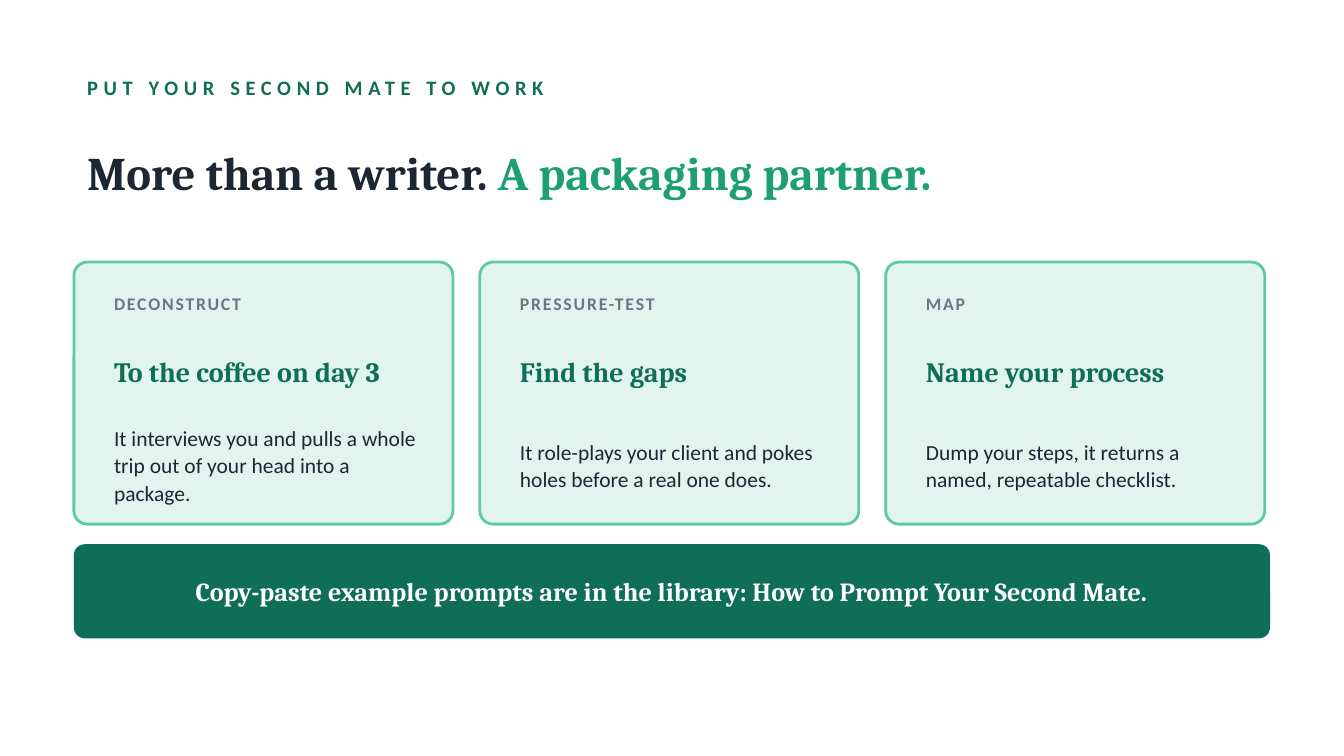
from pptx import Presentation
from pptx.dml.color import RGBColor
from pptx.enum.shapes import MSO_SHAPE as Shape
from pptx.enum.text import MSO_ANCHOR as Anchor, PP_ALIGN as Align
from pptx.util import Inches, Pt

INK = RGBColor(0x1C, 0x27, 0x33)
GRAY = RGBColor(0x6B, 0x77, 0x85)
DEEP_GREEN = RGBColor(0x0F, 0x6E, 0x56)
GREEN = RGBColor(0x1D, 0x9E, 0x75)
BORDER = RGBColor(0x5D, 0xCA, 0xA5)
MINT = RGBColor(0xE1, 0xF5, 0xEE)
WHITE = RGBColor(0xFF, 0xFF, 0xFF)
SANS, SERIF = "Calibri", "Cambria"

# Widescreen 16:9
deck = Presentation()
deck.slide_width, deck.slide_height = Inches(10), Inches(10 * 9 / 16)
slide = deck.slides.add_slide(deck.slide_layouts[6])


def add_text(words, left, top, width, height, size, font, color, bold=True, spacing=0):
    """Add a one-paragraph text box and return the paragraph."""
    box = slide.shapes.add_textbox(Inches(left), Inches(top), Inches(width), Inches(height))
    frame = box.text_frame
    frame.word_wrap = True
    frame.vertical_anchor = Anchor.MIDDLE
    line = frame.paragraphs[0]
    run = line.add_run()
    run.text = words
    if spacing:
        run.font._element.set("spc", str(spacing * 100))
    line.font.size, line.font.name, line.font.bold = Pt(size), font, bold
    run.font.color.rgb = color
    return line


def add_panel(left, top, width, height, radius, fill):
    """Add a rounded panel without an outline."""
    panel = slide.shapes.add_shape(
        Shape.ROUNDED_RECTANGLE, Inches(left), Inches(top), Inches(width), Inches(height))
    panel.adjustments[0] = radius / min(width, height)
    panel.shadow.inherit = False
    panel.fill.solid()
    panel.fill.fore_color.rgb = fill
    panel.line.fill.background()
    return panel


# Heading
MARGIN, CONTENT_WIDTH = 0.55, 8.9
add_text("PUT YOUR SECOND MATE TO WORK", MARGIN, 0.5, CONTENT_WIDTH, 0.3,
         11, SANS, DEEP_GREEN, spacing=3)
title = add_text("More than a writer. ", MARGIN, 0.85, CONTENT_WIDTH, 0.85, 25, SERIF, INK)
accent = title.add_run()
accent.text = "A packaging partner."
accent.font.color.rgb = GREEN

# Three cards
CARD_TOP, CARD_WIDTH, CARD_HEIGHT, GAP = 1.95, 2.82, 1.95, 0.2
TEXT_WIDTH = 2.45
cards = [
    ("DECONSTRUCT", "To the coffee on day 3",
     "It interviews you and pulls a whole trip out of your head into a package."),
    ("PRESSURE-TEST", "Find the gaps",
     "It role-plays your client and pokes holes before a real one does."),
    ("MAP", "Name your process",
     "Dump your steps, it returns a named, repeatable checklist."),
]
for i, (label, heading, detail) in enumerate(cards):
    left = MARGIN + i * (CARD_WIDTH + GAP)
    card = add_panel(left, CARD_TOP, CARD_WIDTH, CARD_HEIGHT, 0.1, MINT)
    card.line.color.rgb = BORDER
    card.line.width = Pt(1.5)
    text_left = left + 0.2
    add_text(label, text_left, 2.11, TEXT_WIDTH, 0.3, 9.5, SANS, GRAY, spacing=1)
    add_text(heading, text_left, 2.41, TEXT_WIDTH, 0.7, 15, SERIF, DEEP_GREEN)
    body = add_text(detail, text_left, 3.13, TEXT_WIDTH, 0.65, 11.5, SANS, INK, bold=False)
    body.line_spacing = 1.08

# Closing banner
add_panel(MARGIN, 4.05, CONTENT_WIDTH, 0.7, 0.08, DEEP_GREEN)
closing = add_text("Copy-paste example prompts are in the library: How to Prompt Your Second Mate.",
                   0.8, 4.05, 8.4, 0.7, 14, SERIF, WHITE)
closing.alignment = Align.CENTER

deck.save("out.pptx")
